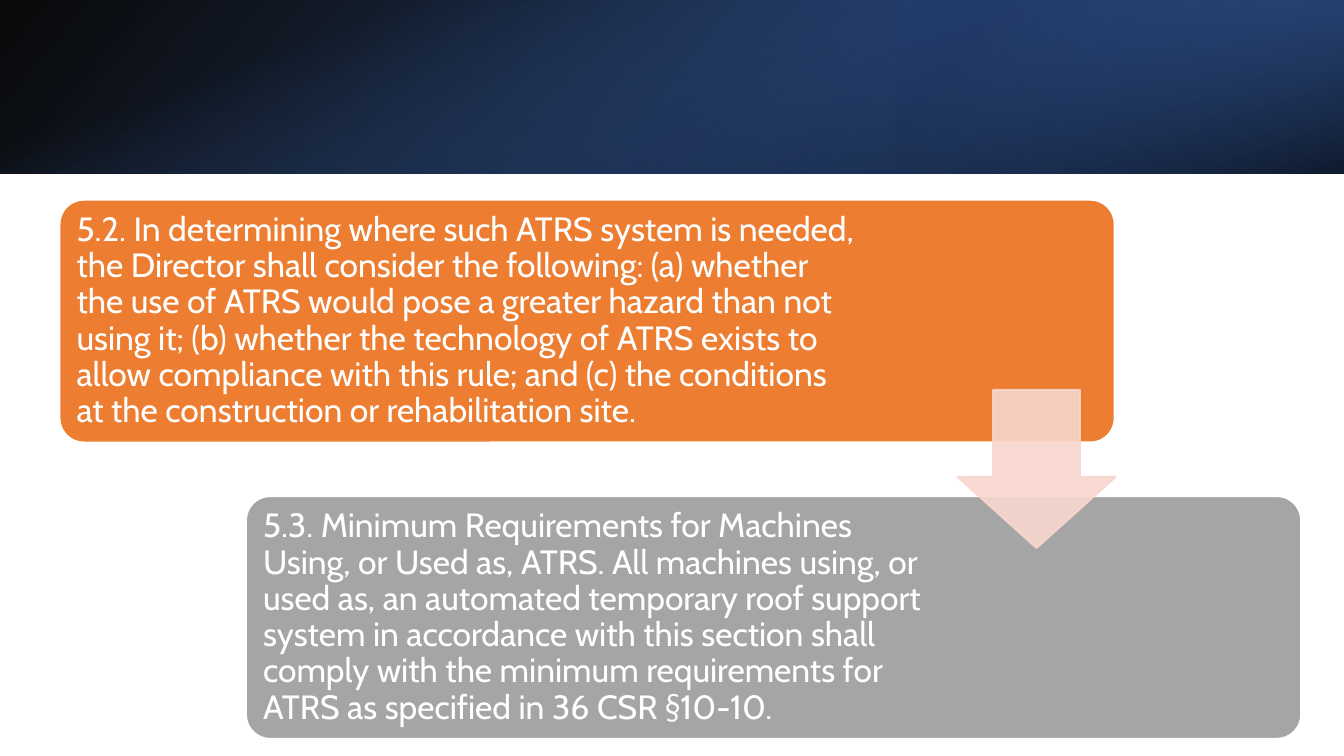
from pptx import Presentation
from pptx.dml.color import RGBColor as RGB
from pptx.enum.shapes import MSO_SHAPE as Kind
from pptx.enum.text import MSO_ANCHOR as Anchor
from pptx.oxml import parse_xml
from pptx.oxml.ns import nsdecls, qn
from pptx.util import Pt

BLACK = RGB(0x00, 0x00, 0x00)
WHITE = RGB(0xFF, 0xFF, 0xFF)
NAVY = RGB(0x20, 0x38, 0x64)
DEEP = RGB(0x2F, 0x55, 0x97)
BLUE = RGB(0x44, 0x72, 0xC4)
ORANGE = RGB(0xED, 0x7D, 0x31)
GRAY = RGB(0xA5, 0xA5, 0xA5)
PINK = RGB(0xF8, 0xD7, 0xCE)

WIDE, HIGH, BAND = 960, 540, 124
CARD_W, CARD_H = 753.8, 173.5
LEFT, TOP = 42.5, 142.6
STEP_X, STEP_Y = 133.2, 211.7

CARDS = [
    (ORANGE, 574.6,
     "5.2. In determining where such ATRS system is needed, the Director shall "
     "consider the following: (a) whether the use of ATRS would pose a greater "
     "hazard than not using it; (b) whether the technology of ATRS exists to "
     "allow compliance with this rule; and (c) the conditions at the "
     "construction or rehabilitation site."),
    (GRAY, 498.2,
     "5.3. Minimum Requirements for Machines Using, or Used as, ATRS. All "
     "machines using, or used as, an automated temporary roof support system in "
     "accordance with this section shall comply with the minimum requirements "
     "for ATRS as specified in 36 CSR §10-10."),
]


def add_form(slide, kind, box):
    """Add a preset shape without shadow in a box given in points."""
    form = slide.shapes.add_shape(kind, *map(Pt, box))
    form.shadow.inherit = False
    return form


def add_fade(slide, box, stops, angle, turn=0, flip=False):
    """Add a rectangle with a linear gradient of see-through stops."""
    form = add_form(slide, Kind.RECTANGLE, box)
    form.line.fill.background()
    form.fill.background()
    form.rotation = turn
    props = form.element.spPr
    if flip:
        props.find(qn("a:xfrm")).set("flipH", "1")
    marks = "".join(
        f'<a:gs pos="{spot * 1000}"><a:srgbClr val="{color}">'
        f'<a:alpha val="{alpha * 1000}"/></a:srgbClr></a:gs>'
        for spot, color, alpha in stops)
    grad = parse_xml(
        f'<a:gradFill {nsdecls("a")} rotWithShape="1"><a:gsLst>{marks}</a:gsLst>'
        f'<a:lin ang="{angle * 60000}" scaled="0"/></a:gradFill>')
    props.replace(props.find(qn("a:noFill")), grad)


def add_band(slide, left, top, width, height):
    """Layer the three gradients of the header band."""
    add_fade(slide, (left, top, width, height),
             [(0, BLACK, 96), (100, DEEP, 100)], 140, flip=True)
    third = width / 3
    add_fade(slide, (left + width - third, top, third, height),
             [(19, NAVY, 68), (100, BLUE, 79)], 320, turn=180, flip=True)
    shift = (width - height) / 2
    add_fade(slide, (left + shift, top - shift, height, width),
             [(23, BLUE, 0), (99, BLACK, 74)], 340, turn=90)


def add_card(slide, left, top, color, width, words):
    """Add a rounded card with its text at the left."""
    card = add_form(slide, Kind.ROUNDED_RECTANGLE, (left, top, CARD_W, CARD_H))
    card.adjustments[0] = 0.1
    card.fill.solid()
    card.fill.fore_color.rgb = color
    card.line.color.rgb = WHITE
    card.line.width = Pt(1.5)
    pad = 5.1
    label = slide.shapes.add_textbox(
        Pt(left + pad), Pt(top + pad), Pt(width), Pt(CARD_H - 2 * pad))
    frame = label.text_frame
    frame.word_wrap = True
    frame.vertical_anchor = Anchor.MIDDLE
    frame.margin_left = frame.margin_right = Pt(7.2)
    frame.margin_top = frame.margin_bottom = Pt(7.2)
    para = frame.paragraphs[0]
    para.text = words
    para.line_spacing = 0.9
    para.font.name = "Cabin"
    para.font.size = Pt(24)
    para.font.color.rgb = WHITE


def add_arrow(slide, left, top, size):
    """Add the pale arrow that leads from card to card."""
    arrow = add_form(slide, Kind.DOWN_ARROW, (left, top, size, size))
    arrow.adjustments[0] = 0.45
    arrow.adjustments[1] = 0.55
    arrow.adjustments[0], arrow.adjustments[1] = 0.55, 0.45
    arrow.fill.solid()
    arrow.fill.fore_color.rgb = PINK
    arrow.line.color.rgb = PINK
    arrow.line.width = Pt(1.5)
    for tint in arrow.element.spPr.iter(qn("a:srgbClr")):
        tint.append(parse_xml(f'<a:alpha {nsdecls("a")} val="90000"/>'))


def main():
    """Build the slide and save it."""
    deck = Presentation()
    deck.slide_width, deck.slide_height = Pt(WIDE), Pt(HIGH)
    slide = deck.slides.add_slide(deck.slide_layouts[6])
    add_band(slide, 0, 0, WIDE, BAND)
    for rank, card in enumerate(CARDS):
        add_card(slide, LEFT + rank * STEP_X, TOP + rank * STEP_Y, *card)
    add_arrow(slide, 684, 278.6, 112.8)
    deck.save("out.pptx")


if __name__ == "__main__":
    main()
